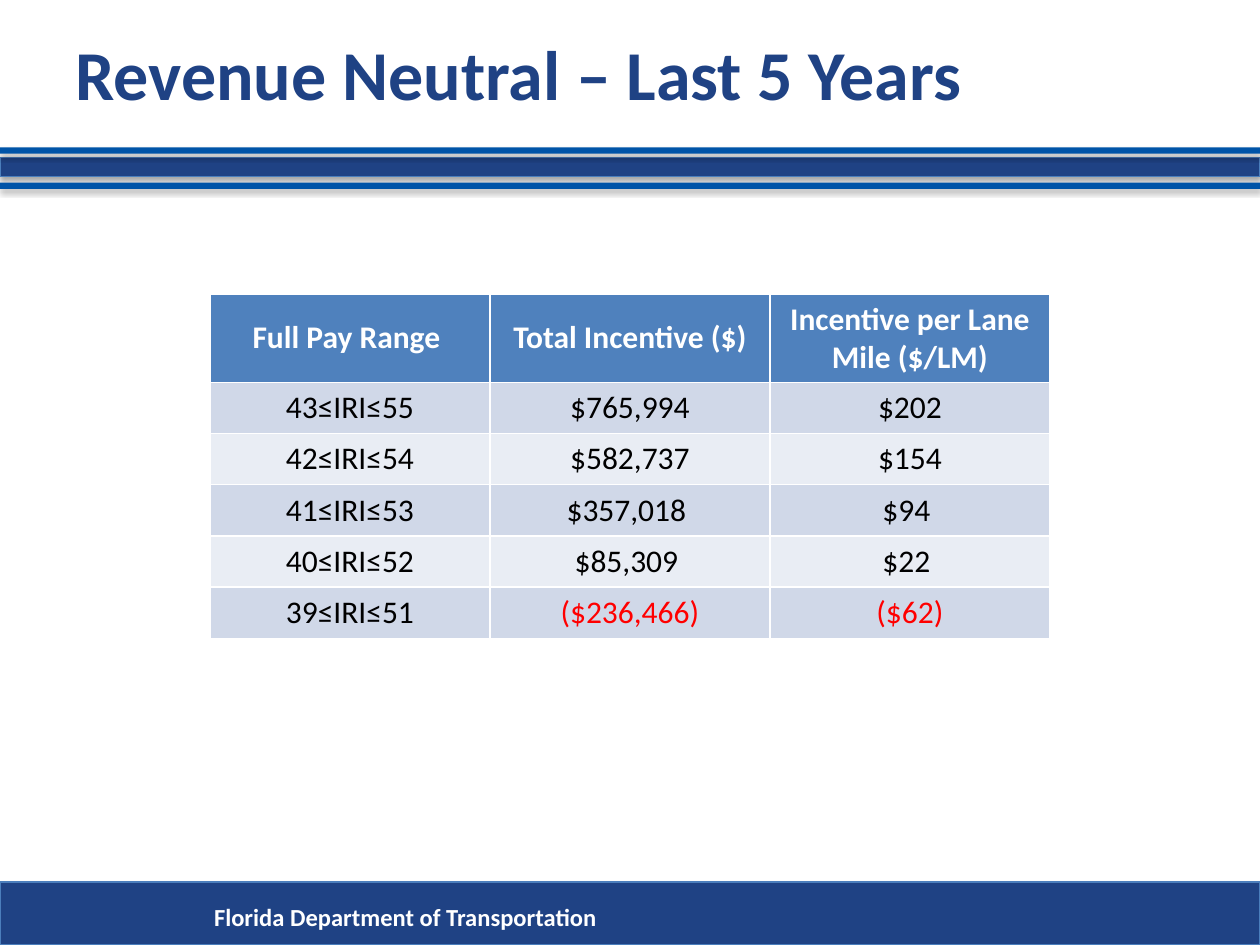
"""Build the slide of pay ranges and incentives over the last five years."""
from dataclasses import dataclass
from typing import Any

import lxml.etree
import pptx
import pptx.dml.color
import pptx.enum.shapes
import pptx.enum.text
import pptx.oxml.ns
import pptx.util

Pt = pptx.util.Pt
RGB = pptx.dml.color.RGBColor
Align = pptx.enum.text.PP_ALIGN
Anchor = pptx.enum.text.MSO_ANCHOR
qn = pptx.oxml.ns.qn

NAVY = RGB(0x1F, 0x42, 0x84)
BLUE = RGB(0x00, 0x54, 0xA8)
EDGE = RGB(0x4B, 0x7E, 0xBC)
HEAD = RGB(0x4F, 0x81, 0xBD)
DARK = RGB(0xD0, 0xD8, 0xE8)
LIGHT = RGB(0xE9, 0xED, 0xF4)
WHITE = RGB(0xFF, 0xFF, 0xFF)
BLACK = RGB(0x00, 0x00, 0x00)
RED = RGB(0xFF, 0x00, 0x00)

WIDE, HIGH = 720, 540
ROWS = [
    ("Full Pay Range ", "Total Incentive ($)", "Incentive per Lane Mile ($/LM)"),
    ("43≤IRI≤55", "$765,994", "$202"),
    ("42≤IRI≤54", "$582,737", "$154"),
    ("41≤IRI≤53", "$357,018 ", "$94 "),
    ("40≤IRI≤52", "$85,309 ", "$22 "),
    ("39≤IRI≤51", "($236,466)", "($62)"),
]
LOW = {
    "vertical_anchor": Anchor.BOTTOM,
    "margin_left": Pt(0.75),
    "margin_top": Pt(0.75),
    "margin_right": Pt(0.75),
    "margin_bottom": Pt(3.6),
}


@dataclass
class Bar:
    top: float
    high: float
    fill: RGB
    edge: bool = False


BARS = [
    Bar(90, 10.8, NAVY, True),
    Bar(104.4, 3.6, BLUE),
    Bar(84.24, 3.6, BLUE),
    Bar(504, 36, NAVY, True),
]


def put(thing: Any, look: dict[str, Any]) -> None:
    """Set each named value on an object."""
    for name, value in look.items():
        setattr(thing, name, value)


def style(para: Any, size: float, color: RGB, bold: bool, align: Any) -> None:
    """Format one paragraph."""
    para.alignment = align
    put(para.font, {"name": "Calibri", "size": Pt(size), "bold": bold})
    para.font.color.rgb = color


def shade(shape: Any) -> None:
    """Give a shape a soft shadow straight below it."""
    shape.shadow.inherit = False
    effects = shape._element.spPr.find(qn("a:effectLst"))
    drop = lxml.etree.SubElement(
        effects, qn("a:outerShdw"), blurRad=str(Pt(3.1)), dist=str(Pt(1.8)),
        dir="5400000", rotWithShape="0")
    tint = lxml.etree.SubElement(drop, qn("a:srgbClr"), val="000000")
    lxml.etree.SubElement(tint, qn("a:alpha"), val="35000")


def draw_bar(slide: Any, bar: Bar) -> None:
    """Draw one bar across the slide."""
    shape = slide.shapes.add_shape(
        pptx.enum.shapes.MSO_SHAPE.RECTANGLE, 0, Pt(bar.top), Pt(WIDE), Pt(bar.high))
    shape.fill.solid()
    shape.fill.fore_color.rgb = bar.fill
    if bar.edge:
        shape.line.color.rgb = EDGE
        shape.line.width = Pt(0.75)
    else:
        shape.line.fill.background()
    shade(shape)


def draw_title(slide: Any) -> None:
    """Place and format the title."""
    title = slide.shapes.title
    put(title, {"left": Pt(36), "top": Pt(0.72), "width": Pt(648), "height": Pt(82)})
    title.text_frame.text = "Revenue Neutral – Last 5 Years"
    put(title.text_frame, {"vertical_anchor": Anchor.MIDDLE, "word_wrap": True})
    style(title.text_frame.paragraphs[0], 40, NAVY, True, Align.LEFT)


def draw_foot(slide: Any) -> None:
    """Write the agency name on the bottom bar."""
    box = slide.shapes.add_textbox(Pt(115.2), Pt(512), Pt(574.5), Pt(24.5))
    box.text_frame.word_wrap = True
    box.text_frame.text = "Florida Department of Transportation"
    style(box.text_frame.paragraphs[0], 14, WHITE, True, Align.LEFT)


def draw_cell(cell: Any, text: str, row: int, col: int) -> None:
    """Fill and format one table cell."""
    head = row == 0
    cell.text = text
    cell.fill.solid()
    cell.fill.fore_color.rgb = HEAD if head else DARK if row % 2 else LIGHT
    if head:
        cell.vertical_anchor = Anchor.MIDDLE
    elif row > 2 and col > 0:
        put(cell, LOW)
    ink = WHITE if head else RED if text.startswith("(") else BLACK
    style(cell.text_frame.paragraphs[0], 18, ink, head, Align.CENTER)


def draw_table(slide: Any) -> None:
    """Draw the table of incentives."""
    table = slide.shapes.add_table(
        len(ROWS), len(ROWS[0]), Pt(120), Pt(168), Pt(480), Pt(196.5)).table
    for row, texts in enumerate(ROWS):
        table.rows[row].height = Pt(29.3 if row else 50)
        for col, text in enumerate(texts):
            draw_cell(table.cell(row, col), text, row, col)


def main() -> None:
    """Build and save the deck."""
    deck = pptx.Presentation()
    put(deck, {"slide_width": Pt(WIDE), "slide_height": Pt(HIGH)})
    slide = deck.slides.add_slide(deck.slide_layouts.get_by_name("Title Only"))
    for bar in BARS:
        draw_bar(slide, bar)
    draw_foot(slide)
    draw_title(slide)
    draw_table(slide)
    deck.save("out.pptx")


if __name__ == "__main__":
    main()
